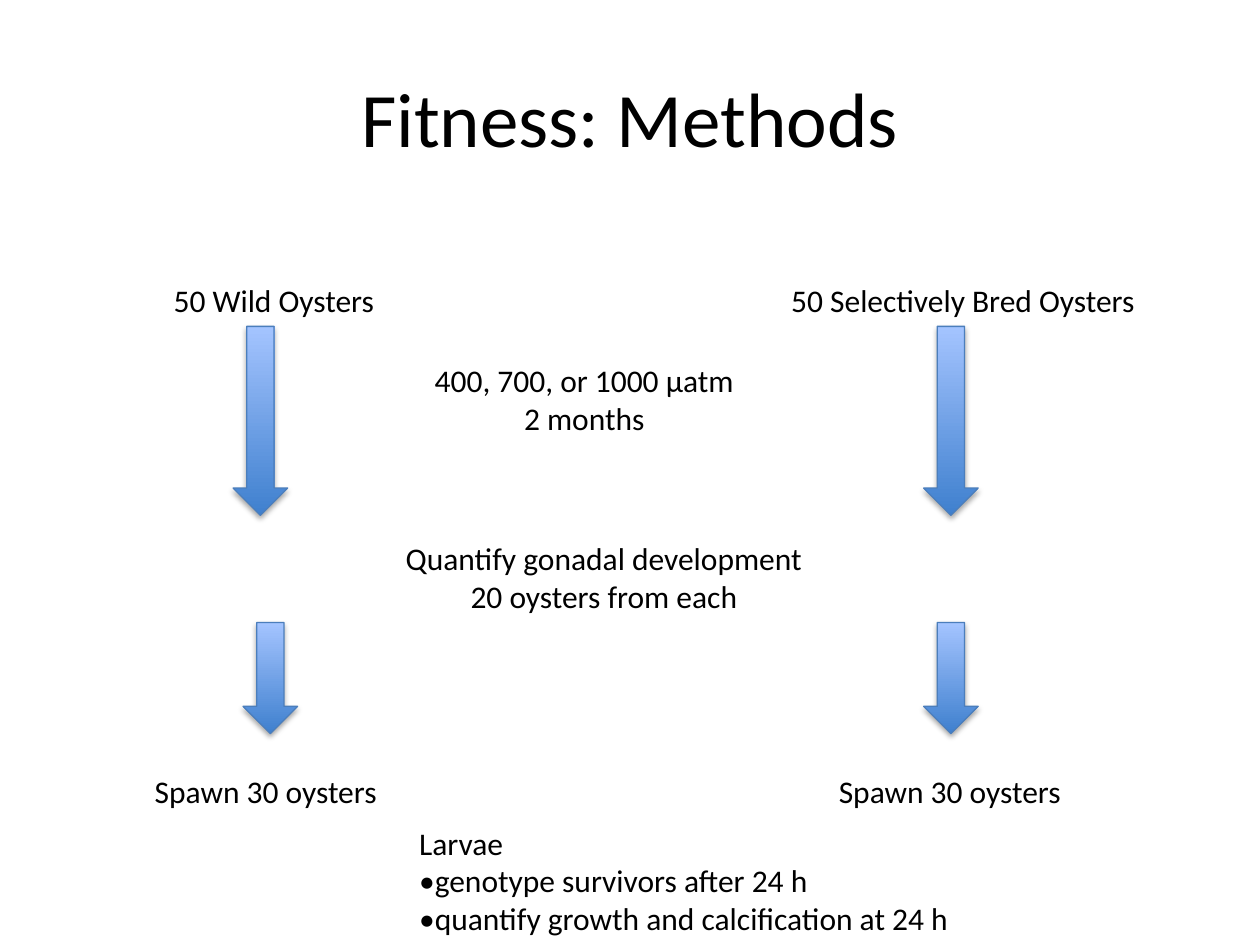
"""Build the Fitness: Methods slide."""
from lxml.etree import SubElement
from pptx import Presentation
from pptx.dml.color import RGBColor
from pptx.enum.shapes import MSO_SHAPE
from pptx.enum.text import MSO_ANCHOR, MSO_AUTO_SIZE, PP_ALIGN
from pptx.oxml.ns import qn
from pptx.util import Cm, Pt

BODY = {"name": "Calibri", "size": Pt(18)}
TITLE = {"name": "Calibri", "size": Pt(44)}
LABEL_FRAME = {"word_wrap": False, "auto_size": MSO_AUTO_SIZE.SHAPE_TO_FIT_TEXT}
TITLE_FRAME = {"word_wrap": True, "vertical_anchor": MSO_ANCHOR.MIDDLE}
SHADOW = {"blurRad": "40000", "dist": "23000", "dir": "5400000", "rotWithShape": "0"}
ARROW_WIDTH = 1.1


def rgb(value):
    """Return the colour for a hex string."""
    return RGBColor.from_string(value)


def apply(obj, values):
    """Set attributes of an object from a dict."""
    for name, value in values.items():
        setattr(obj, name, value)


def add_text(s, box, lines, align=PP_ALIGN.LEFT, font=BODY, frame=LABEL_FRAME):
    """Add a text box with one paragraph per line."""
    tf = s.shapes.add_textbox(*map(Cm, box)).text_frame
    apply(tf, frame)
    for i, line in enumerate(lines):
        p = tf.add_paragraph() if i else tf.paragraphs[0]
        p.alignment = align
        r = p.add_run()
        r.text = line
        apply(r.font, font)
        r.font.color.rgb = rgb("000000")


def add_shadow(sp):
    """Give a shape a soft shadow below it."""
    sp.shadow.inherit = False
    effects = sp._element.spPr.find(qn("a:effectLst"))
    outer = SubElement(effects, qn("a:outerShdw"), SHADOW)
    color = SubElement(outer, qn("a:srgbClr"), val="000000")
    SubElement(color, qn("a:alpha"), val="35000")


def add_arrow(s, left, top, height):
    """Add a down arrow with a blue gradient."""
    sp = s.shapes.add_shape(MSO_SHAPE.DOWN_ARROW, *map(Cm, (left, top, ARROW_WIDTH, height)))
    sp.fill.gradient()
    sp.fill.gradient_angle = 90
    for stop, (position, color) in zip(sp.fill.gradient_stops, ((0, "3F80CE"), (1, "A4C4FF"))):
        stop.position = position
        stop.color.rgb = rgb(color)
    sp.line.color.rgb = rgb("4B7EBC")
    sp.line.width = Pt(0.75)
    add_shadow(sp)


def main():
    """Build and save the slide."""
    prs = Presentation()
    apply(prs, {"slide_width": Cm(25.4), "slide_height": Cm(19.05)})
    s = prs.slides.add_slide(prs.slide_layouts[6])
    center = PP_ALIGN.CENTER

    add_text(s, (1.27, 0.76, 22.86, 3.18), ["Fitness: Methods"], center, TITLE, TITLE_FRAME)
    add_text(s, (3.25, 5.54, 4.62, 1.02), ["50 Wild Oysters"])
    add_text(s, (15.7, 5.54, 7.57, 1.02), ["50 Selectively Bred Oysters"])
    add_text(s, (8.48, 7.16, 6.6, 1.8), ["400, 700, or 1000 µatm", "2 months"], center)
    for left in (4.7, 18.62):
        add_arrow(s, left, 6.58, 3.81)
    add_text(s, (7.87, 10.74, 8.61, 1.8),
             ["Quantify gonadal development", "20 oysters from each"], center)
    for left in (4.9, 18.62):
        add_arrow(s, left, 12.55, 2.24)
    for left in (2.87, 16.66):
        add_text(s, (left, 15.44, 5.08, 1.02), ["Spawn 30 oysters"])
    add_text(s, (8.2, 16.48, 11.33, 2.57),
             ["Larvae", "•genotype survivors after 24 h",
              "•quantify growth and calcification at 24 h"])
    prs.save("out.pptx")


if __name__ == "__main__":
    main()
